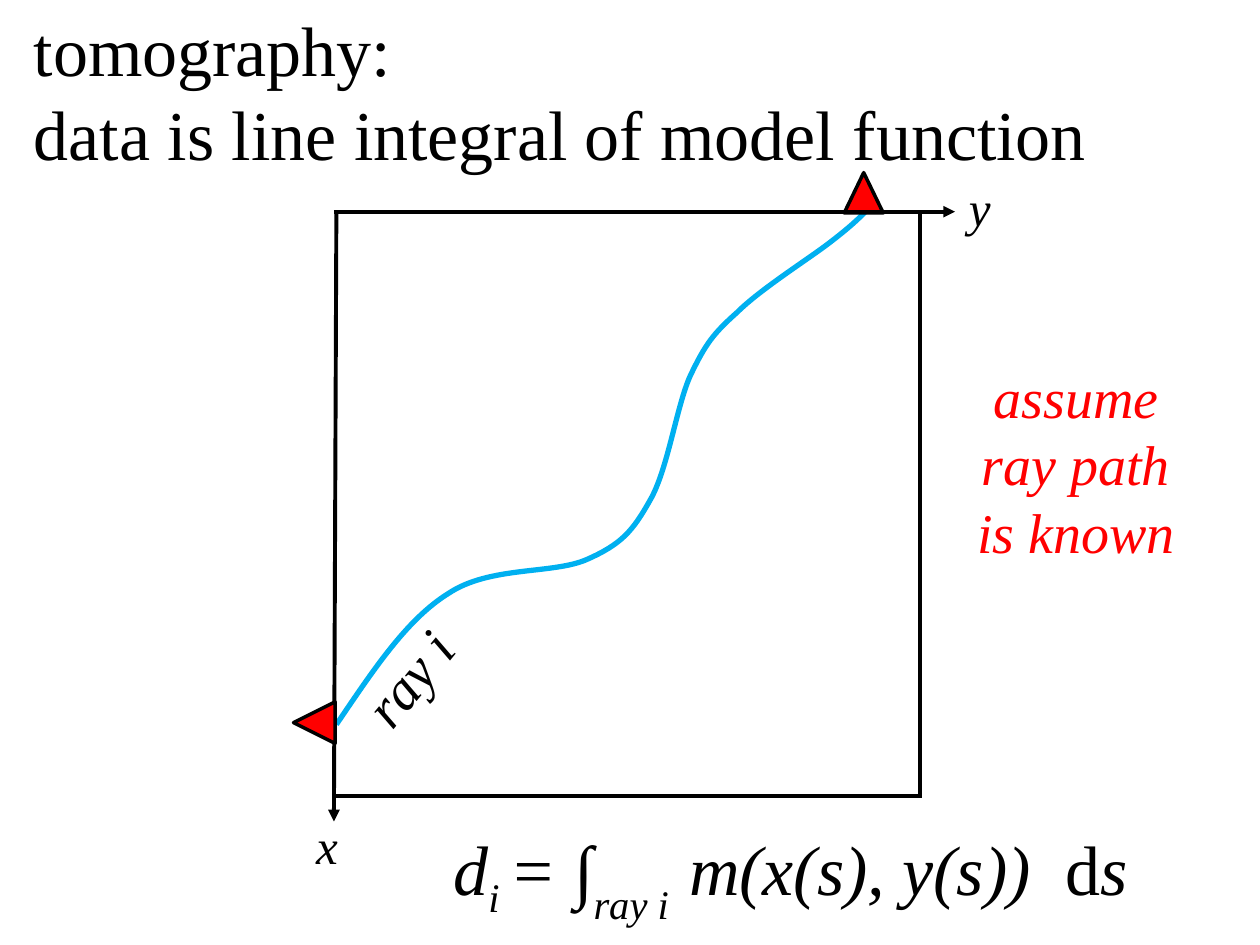
from lxml.etree import SubElement
from pptx import Presentation
from pptx.dml.color import RGBColor
from pptx.enum.shapes import MSO_CONNECTOR as Conn, MSO_SHAPE as Kind
from pptx.enum.text import MSO_AUTO_SIZE as Fit, PP_ALIGN as Align
from pptx.oxml.ns import qn
from pptx.util import Inches, Pt

BLACK, RED, BLUE = "000000", "FF0000", "00B0F0"
FONT = "Times New Roman"

# Ray as fractions-free inches from the plot corner: start, then Bezier triples
RAY = [
    (0.02, 4.07),
    (0.30, 3.66), (0.57, 3.24), (0.91, 3.03),
    (1.24, 2.81), (1.74, 2.88), (2.01, 2.76),
    (2.28, 2.64), (2.37, 2.54), (2.51, 2.29),
    (2.65, 2.05), (2.72, 1.54), (2.83, 1.30),
    (2.95, 1.05), (3.01, 0.97), (3.20, 0.80),
    (3.38, 0.62), (3.76, 0.38), (3.93, 0.25),
    (4.10, 0.12), (4.16, 0.06), (4.22, 0),
]


def paint(hue):
    return RGBColor.from_string(hue)


def ink(shape, hue, width):
    shape.line.color.rgb = paint(hue)
    shape.line.width = Pt(width)


def draw_line(slide, start, end, arrow=False):
    line = slide.shapes.add_connector(
        Conn.STRAIGHT, *[Inches(v) for v in (*start, *end)])
    ink(line, BLACK, 2.25)
    props = line._element.spPr
    if arrow:
        SubElement(props.get_or_add_ln(), qn("a:tailEnd"), type="triangle")
    SubElement(props, qn("a:effectLst"))


def draw_curve(slide, points, hue, width):
    """Draw a start point followed by cubic Bezier triples."""
    spots = [(Inches(x), Inches(y)) for x, y in points]
    pen = slide.shapes.build_freeform(*spots[0])
    pen.add_line_segments(spots[1:], close=False)
    curve = pen.convert_to_shape()
    curve.shadow.inherit = False
    curve.fill.background()
    ink(curve, hue, width)
    # Merge each three straight segments into one Bezier segment
    trace = next(curve._element.iter(qn("a:path")))
    steps = trace.findall(qn("a:lnTo"))
    for n in range(0, len(steps), 3):
        bend = SubElement(trace, qn("a:cubicBezTo"))
        for step in steps[n:n + 3]:
            bend.append(step[0])
            trace.remove(step)


def draw_mark(slide, box, turn=0):
    mark = slide.shapes.add_shape(Kind.ISOSCELES_TRIANGLE,
                                  *[Inches(v) for v in box])
    mark.rotation = turn
    mark.shadow.inherit = False
    mark.fill.solid()
    mark.fill.fore_color.rgb = paint(RED)
    ink(mark, BLACK, 2)


def add_text(slide, box, paras, size, hue=BLACK, align=Align.LEFT, turn=0):
    """Write paragraphs, each a list of (text, italic, baseline) runs."""
    label = slide.shapes.add_textbox(*[Inches(v) for v in box])
    label.rotation = turn
    frame = label.text_frame
    frame.word_wrap = True
    frame.auto_size = Fit.SHAPE_TO_FIT_TEXT
    for n, runs in enumerate(paras):
        para = frame.add_paragraph() if n else frame.paragraphs[0]
        para.alignment = align
        for text, slant, base in runs:
            run = para.add_run()
            run.text = text
            style = {"name": FONT, "size": Pt(size), "italic": slant}
            for key, value in style.items():
                setattr(run.font, key, value)
            run.font.color.rgb = paint(hue)
            if base:
                run._r.get_or_add_rPr().set("baseline", str(base * 1000))


def add_title(slide, left, top, width, height):
    lines = ["tomography:", "data is line integral of model function"]
    add_text(slide, (left, top, width, height),
             [[(line, False, 0)] for line in lines], 40)


def add_plot(slide, left, top, width, height):
    """Draw the framed model area, its axes, the ray and both stations."""
    right, low = left + width, top + height
    draw_line(slide, (right, top), (right, low))
    draw_line(slide, (left + 0.02, top), (left, low + 0.2), arrow=True)
    draw_curve(slide, [(left + x, top + y) for x, y in RAY], BLUE, 3)
    draw_mark(slide, (left - 0.32, top + 3.89, 0.33, 0.33), turn=270)
    draw_mark(slide, (left + 4.05, top - 0.31, 0.31, 0.32))
    draw_line(slide, (left, top), (right + 0.28, top), arrow=True)
    draw_line(slide, (left, low), (right + 0.02, low))
    add_text(slide, (left + 0.04, top + 3.29, 1.25, 0.64),
             [[("ray i", True, 0)]], 32, turn=309.3)
    for name, x, y in (("x", left - 0.24, low + 0.1),
                       ("y", right + 0.29, top - 0.32)):
        add_text(slide, (x, y, 0.58, 0.57), [[(name, True, 0)]], 28)


def add_formula(slide, left, top, width, height):
    runs = [("d", True, 0), ("i ", True, -25), ("= ∫", True, 0),
            ("ray i  ", True, -35), ("m(x(s), y(s))  ", True, 0),
            ("d", False, 0), ("s", True, 0)]
    add_text(slide, (left, top, width, height), [runs], 40)


def add_note(slide, left, top, width, height):
    add_text(slide, (left, top, width, height),
             [[("assume ray path is known", True, 0)]], 32, RED, Align.CENTER)


def main():
    deck = Presentation()
    deck.slide_width, deck.slide_height = Inches(10), Inches(7.5)
    slide = deck.slides.add_slide(deck.slide_layouts[6])
    add_plot(slide, 2.65, 1.68, 4.65, 4.64)
    add_formula(slide, 3.5, 6.5, 6.5, 0.77)
    add_title(slide, 0.17, 0, 9.83, 1.45)
    add_note(slide, 7.5, 2.83, 2.08, 1.72)
    deck.save("out.pptx")


if __name__ == "__main__":
    main()
